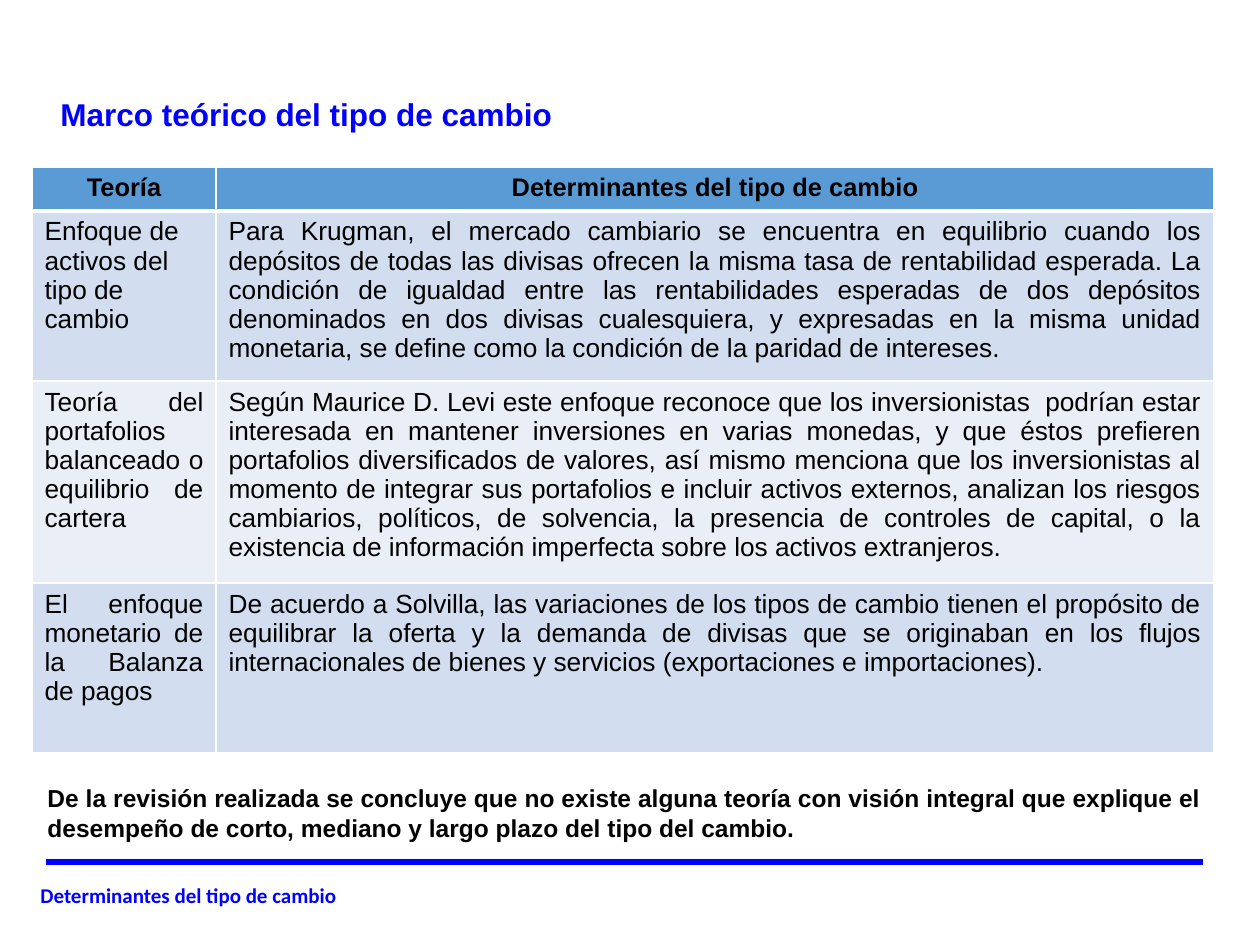
from lxml.etree import SubElement
from pptx import Presentation
from pptx.dml.color import RGBColor
from pptx.enum.shapes import MSO_CONNECTOR
from pptx.enum.text import MSO_AUTO_SIZE, PP_ALIGN
from pptx.oxml import parse_xml
from pptx.oxml.ns import nsdecls, qn
from pptx.util import Emu, Pt

BLUE, BLACK, WHITE = "0000FF", "000000", "FFFFFF"
HEADER_FILL, BAND_FILLS = "5B9BD5", ("D2DEEF", "EAEFF7")
LEFT, CENTER, JUSTIFY = PP_ALIGN.LEFT, PP_ALIGN.CENTER, PP_ALIGN.JUSTIFY

TEXTS = [
    ("Determinantes del tipo de cambio", (28, 876, 900, 38), "Calibri", 12, BLUE, LEFT),
    ("Marco teórico del tipo de cambio", (48, 89, 1150, 51), "Arial", 18, BLUE, LEFT),
    ("De la revisión realizada se concluye que no existe alguna teoría con visión integral "
     "que explique el desempeño de corto, mediano y largo plazo del tipo del cambio.",
     (35, 777, 1179, 72), "Arial", 14, BLACK, JUSTIFY),
]
RULE = (46, 862, 1203, 862)

HEADINGS = ("Teoría", "Determinantes del tipo de cambio")
THEORIES = [
    ("Enfoque de activos del tipo de cambio",
     "Para Krugman, el mercado cambiario se encuentra en equilibrio cuando los depósitos de "
     "todas las divisas ofrecen la misma tasa de rentabilidad esperada. La condición de "
     "igualdad entre las rentabilidades esperadas de dos depósitos denominados en dos divisas "
     "cualesquiera, y expresadas en la misma unidad monetaria, se define como la condición de "
     "la paridad de intereses."),
    ("Teoría del portafolios balanceado o equilibrio de cartera",
     "Según Maurice D. Levi este enfoque reconoce que los inversionistas  podrían estar "
     "interesada en mantener inversiones en varias monedas, y que éstos prefieren portafolios "
     "diversificados de valores, así mismo menciona que los inversionistas al momento de "
     "integrar sus portafolios e incluir activos externos, analizan los riesgos cambiarios, "
     "políticos, de solvencia, la presencia de controles de capital, o la existencia de "
     "información imperfecta sobre los activos extranjeros."),
    ("El enfoque monetario de la Balanza de pagos",
     "De acuerdo a Solvilla, las variaciones de los tipos de cambio tienen el propósito de "
     "equilibrar la oferta y la demanda de divisas que se originaban en los flujos "
     "internacionales de bienes y servicios (exportaciones e importaciones)."),
]
TABLE_LEFT, TABLE_TOP = 32, 167
COLUMN_WIDTHS = (184, 998)
ROW_HEIGHTS = (44, 170, 202, 170)


def px(length):
    return Emu(round(length * 914400 / 126))


def rgb(value):
    return RGBColor.from_string(value)


def style(paragraph, name, size, color, bold, align):
    paragraph.alignment = align
    font = paragraph.font
    font.name, font.size, font.bold = name, Pt(size), bold
    font.color.rgb = rgb(color)


def add_text(slide, text, box, name, size, color, align):
    frame = slide.shapes.add_textbox(*map(px, box)).text_frame
    frame.word_wrap = True
    frame.auto_size = MSO_AUTO_SIZE.SHAPE_TO_FIT_TEXT
    frame.text = text
    style(frame.paragraphs[0], name, size, color, True, align)


def add_rule(slide):
    rule = slide.shapes.add_connector(MSO_CONNECTOR.STRAIGHT, *map(px, RULE))
    rule.line.color.rgb = rgb(BLUE)
    rule.line.width = Pt(3)
    SubElement(rule._element.spPr, qn("a:effectLst"))


def set_borders(cell, widths):
    properties = cell._tc.get_or_add_tcPr()
    for position, (side, width) in enumerate(zip("LRTB", widths)):
        properties.insert(position, parse_xml(
            f'<a:ln{side} {nsdecls("a")} w="{Pt(width)}"><a:solidFill>'
            f'<a:srgbClr val="{WHITE}"/></a:solidFill></a:ln{side}>'))


def add_theories(slide):
    rows = [HEADINGS, *THEORIES]
    table = slide.shapes.add_table(
        len(rows), len(HEADINGS), px(TABLE_LEFT), px(TABLE_TOP),
        px(sum(COLUMN_WIDTHS)), px(sum(ROW_HEIGHTS))).table
    for column, width in zip(table.columns, COLUMN_WIDTHS):
        column.width = px(width)
    for r, (texts, height) in enumerate(zip(rows, ROW_HEIGHTS)):
        table.rows[r].height = px(height)
        header = r == 0
        for c, text in enumerate(texts):
            cell = table.cell(r, c)
            cell.text = text
            align = CENTER if header else LEFT if (r, c) == (1, 0) else JUSTIFY
            style(cell.text_frame.paragraphs[0], "Arial", 14.5 if header else 15,
                  BLACK, header, align)
            cell.fill.solid()
            cell.fill.fore_color.rgb = rgb(HEADER_FILL if header else BAND_FILLS[(r - 1) % 2])
            set_borders(cell, (1, 1, 3 if r == 1 else 1, 3 if header else 1))


def main():
    """Build the slide on exchange rate theories."""
    presentation = Presentation()
    presentation.slide_width, presentation.slide_height = px(1260), px(945)
    slide = presentation.slides.add_slide(presentation.slide_layouts[6])
    add_rule(slide)
    for entry in TEXTS:
        add_text(slide, *entry)
    add_theories(slide)
    presentation.save("out.pptx")


if __name__ == "__main__":
    main()
